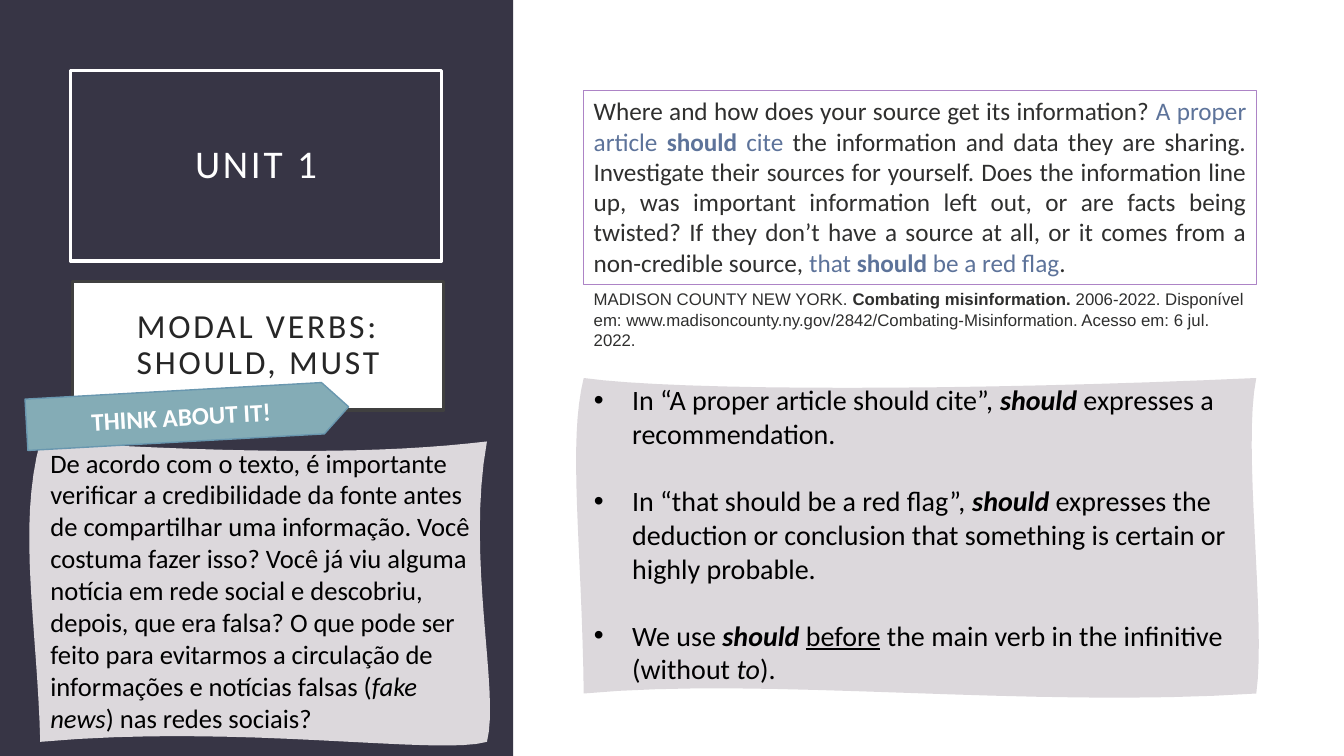
from dataclasses import dataclass

from lxml.etree import SubElement
from pptx import Presentation
from pptx.dml.color import RGBColor
from pptx.enum.shapes import MSO_SHAPE as Shape
from pptx.enum.text import MSO_ANCHOR as Anchor, MSO_AUTO_SIZE as AutoSize, PP_ALIGN as Align
from pptx.oxml.ns import qn
from pptx.util import Inches, Pt


@dataclass(frozen=True)
class Theme:
    font: str = "Calibri"
    source_font: str = "Arial"
    panel: str = "373545"
    white: str = "FFFFFF"
    black: str = "000000"
    frame: str = "404040"
    subtitle: str = "262626"
    ink: str = "2F2F2E"
    quote: str = "5D739A"
    quote_frame: str = "AD84C6"
    paper: str = "DCD8DC"
    arrow: str = "84ACB6"
    arrow_line: str = "6997AF"
    title_size: float = 28
    subtitle_size: float = 24
    rule_size: float = 20
    question_size: float = 19
    body_size: float = 18
    source_size: float = 12


def write(frame, paragraphs, font, size, color, align=Align.LEFT, anchor=Anchor.TOP,
          inset=(0.1, 0.05, 0.1, 0.05), line_spacing=None, tracking=0, bold=False,
          bullet_indent=0, gap=0):
    frame.word_wrap = True
    frame.auto_size = AutoSize.NONE
    frame.vertical_anchor = anchor
    frame.margin_left, frame.margin_top, frame.margin_right, frame.margin_bottom = map(Inches, inset)
    for index, runs in enumerate(paragraphs):
        para = frame.paragraphs[0] if index == 0 else frame.add_paragraph()
        para.alignment = align
        if line_spacing:
            para.line_spacing = line_spacing
        if index and gap:
            para.space_before = Pt(gap)
        if bullet_indent:
            properties = para._p.get_or_add_pPr()
            properties.set("marL", str(Inches(bullet_indent)))
            properties.set("indent", str(-Inches(bullet_indent)))
            SubElement(properties, qn("a:buFont")).set("typeface", "Arial")
            SubElement(properties, qn("a:buChar")).set("char", "•")
        for text, marks in runs:
            span = para.add_run()
            span.text = text
            span.font.name = font
            span.font.size = Pt(size)
            span.font.bold = bold or "b" in marks
            span.font.italic = "i" in marks
            span.font.underline = "u" in marks
            span.font.color.rgb = RGBColor.from_string(marks.get("color", color))
            if tracking:
                span._r.get_or_add_rPr().set("spc", str(tracking * 100))


def curve(start, first, second, end, steps=16):
    for step in range(1, steps + 1):
        t = step / steps
        weights = ((1 - t) ** 3, 3 * t * (1 - t) ** 2, 3 * t * t * (1 - t), t ** 3)
        yield tuple(sum(weight * point[axis] for weight, point in
                        zip(weights, (start, first, second, end))) for axis in (0, 1))


class SlideBuilder:
    def __init__(self, slide, theme):
        self.slide = slide
        self.theme = theme

    def paint(self, shape, fill=None, line=None, width=1):
        if fill:
            shape.fill.solid()
            shape.fill.fore_color.rgb = RGBColor.from_string(fill)
        else:
            shape.fill.background()
        if line:
            shape.line.color.rgb = RGBColor.from_string(line)
            shape.line.width = Pt(width)
        else:
            shape.line.fill.background()

    def box(self, place, kind=Shape.RECTANGLE, rotation=0, **look):
        box = self.slide.shapes.add_shape(kind, *map(Inches, place))
        box.shadow.inherit = False
        box.rotation = rotation
        self.paint(box, **look)
        return box

    def panel(self, place, fill):
        panel = self.box(place, fill=fill)
        tree = self.slide.shapes._spTree
        tree.remove(panel._element)
        tree.insert(2, panel._element)

    def title(self, text, place, **look):
        title = self.slide.shapes.title
        title.left, title.top, title.width, title.height = map(Inches, place)
        self.paint(title, **look)
        self.text(title, [[(text, {})]], **HEADING, size=self.theme.title_size,
                  color=self.theme.white)

    def text_box(self, place):
        return self.slide.shapes.add_textbox(*map(Inches, place))

    def text(self, shape, paragraphs, **style):
        write(shape.text_frame, paragraphs, **{"font": self.theme.font, **style})

    def paper(self, place, bends, paragraphs, **style):
        left, top, width, height = place
        right, bottom = left + width, top + height
        corners = [(left, top), (right, top), (right, bottom), (left, bottom), (left, top)]
        outline = [point for start, end, (first, second) in zip(corners, corners[1:], bends)
                   for point in curve(start, first, second, end)]
        builder = self.slide.shapes.build_freeform(Inches(left), Inches(top))
        builder.add_line_segments([(Inches(x), Inches(y)) for x, y in outline], close=True)
        sheet = builder.convert_to_shape()
        sheet.shadow.inherit = False
        self.paint(sheet, fill=self.theme.paper)
        inset = (left - sheet.left.inches + 0.1, top - sheet.top.inches + 0.05,
                 (sheet.left + sheet.width) / Inches(1) - right + 0.1, 0)
        self.text(sheet, paragraphs, color=self.theme.black, inset=inset, **style)


HEADING = dict(align=Align.CENTER, anchor=Anchor.MIDDLE, inset=(0.2,) * 4,
               line_spacing=0.9, tracking=2)


def main():
    theme = Theme()
    deck = Presentation()
    deck.slide_width, deck.slide_height = Inches(13.33), Inches(7.5)
    page = SlideBuilder(deck.slides.add_slide(deck.slide_layouts[5]), theme)

    page.panel((0, 0, 5.09, 7.5), theme.panel)
    page.title("UNIT 1", (0.7, 0.7, 3.68, 1.89), line=theme.white, width=2.5)
    subtitle = page.box((0.72, 2.79, 3.68, 1.28), fill=theme.white, line=theme.frame, width=2.5)
    page.text(subtitle, [[("MODAL VERBS: SHOULD, MUST", {})]], **HEADING,
              size=theme.subtitle_size, color=theme.subtitle)

    source = page.text_box((5.79, 2.82, 6.67, 0.77))
    page.text(source, [[
        ("MADISON COUNTY NEW YORK. ", {}),
        ("Combating misinformation. ", {"b": True}),
        ("2006-2022. Disponível em: www.madisoncounty.ny.gov/2842/Combating-Misinformation. "
         "Acesso em: 6 jul. 2022.", {}),
    ]], font=theme.source_font, size=theme.source_size, color=theme.ink)

    strong = {"b": True, "i": True}
    page.paper((5.79, 3.75, 6.67, 3.13), [
        ((6.71, 3.88), (9.61, 3.88)),
        ((12.32, 4.43), (12.56, 6.17)),
        ((10.21, 7.03), (7.6, 6.71)),
        ((5.77, 5.38), (5.63, 4.39)),
    ], [
        [("In “A proper article should cite”, ", {}), ("should", strong),
         (" expresses a recommendation.", {})],
        [("In “that should be a red flag”, ", {}), ("should", strong),
         (" expresses the deduction or conclusion that something is certain or highly probable.", {})],
        [("We use ", {}), ("should ", strong), ("before", {"u": True}),
         (" the main verb in the infinitive (without ", {}), ("to", {"i": True}), (").", {})],
    ], size=theme.rule_size, bullet_indent=0.38, gap=24)

    quote = {"color": theme.quote}
    quote_strong = {"color": theme.quote, "b": True}
    article = page.box((5.79, 0.9, 6.67, 1.92), line=theme.quote_frame, width=0.75)
    page.text(article, [[
        ("Where and how does your source get its information? ", {}),
        ("A proper article ", quote), ("should", quote_strong), (" cite", quote),
        (" the information and data they are sharing. Investigate their sources for yourself. "
         "Does the information line up, was important information left out, or are facts being "
         "twisted? If they don’t have a source at all, or it comes from a non-credible source, ", {}),
        ("that ", quote), ("should", quote_strong), (" be a red flag", quote), (".", {}),
    ]], size=theme.body_size, color=theme.ink, align=Align.JUSTIFY)

    page.paper((0.4, 4.38, 4.43, 2.98), [
        ((2.54, 4.51), (3.82, 4.5)),
        ((4.62, 5.54), (4.96, 6.86)),
        ((4.36, 7.5), (2.38, 7.18)),
        ((0.37, 6.21), (0.17, 5.23)),
    ], [[
        ("De acordo com o texto, é importante verificar a credibilidade da fonte antes de "
         "compartilhar uma informação. Você costuma fazer isso? Você já viu alguma notícia em "
         "rede social e descobriu, depois, que era falsa? O que pode ser feito para evitarmos a "
         "circulação de informações e notícias falsas (", {}),
        ("fake news", {"i": True}), (") nas redes sociais?", {}),
    ]], size=theme.question_size)

    arrow = page.box((0.26, 3.87, 3.2, 0.51), Shape.PENTAGON, rotation=356.8,
                     fill=theme.arrow, line=theme.arrow_line)
    page.text(arrow, [[("THINK ABOUT IT!", {})]], size=theme.body_size, color=theme.white,
              bold=True, align=Align.CENTER, anchor=Anchor.MIDDLE)
    deck.save("out.pptx")


if __name__ == "__main__":
    main()
